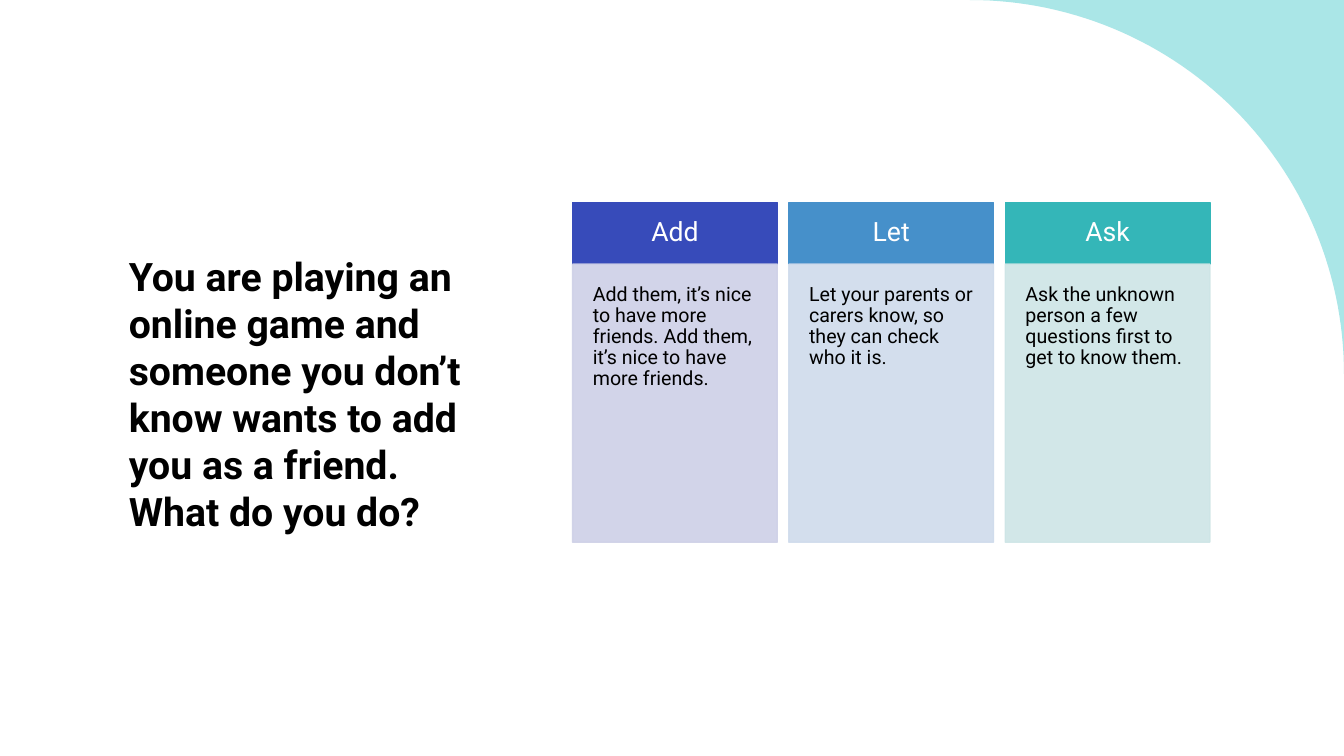
"""Build a quiz slide with one question and three answer cards."""
from math import cos, pi, sin

from lxml.etree import SubElement
from pptx import Presentation
from pptx.dml.color import RGBColor
from pptx.enum.shapes import MSO_SHAPE as Shape
from pptx.enum.text import MSO_ANCHOR as Anchor, PP_ALIGN as Align
from pptx.oxml.ns import qn
from pptx.util import Inches, Pt

QUESTION = ("You are playing an online game and someone you don’t know "
            "wants to add you as a friend. What do you do?")
ANSWERS = [
    ("Add", "Add them, it’s nice to have more friends. "
            "Add them, it’s nice to have more friends.", "374BBA", "CED0E7"),
    ("Let", "Let your parents or carers know, so they can check who it is.",
     "4690CA", "CFDBEC"),
    ("Ask", "Ask the unknown person a few questions first to get to know them.",
     "34B6B8", "CEE5E6"),
]
FONT = "Roboto"
WIDTH, HEIGHT = 13.33, 7.5
CARD_LEFT, CARD_TOP, CARD_WIDTH, CARD_STEP = 5.68, 2.01, 2.03, 2.145
HEAD_HEIGHT, BODY_HEIGHT = 0.61, 2.76
CORNER_RADIUS, CORNER_STEPS = 3.71, 60


def color(value):
    return RGBColor.from_string(value)


def paint(shape, fill, line=True, opacity=100):
    shape.shadow.inherit = False
    shape.fill.solid()
    shape.fill.fore_color.rgb = color(fill)
    if line:
        shape.line.color.rgb = color(fill)
        shape.line.width = Pt(1)
    else:
        shape.line.fill.background()
    if opacity < 100:
        for tone in shape._element.spPr.iter(qn("a:srgbClr")):
            SubElement(tone, qn("a:alpha"), val=str(opacity * 1000))


def write(shape, text, size, ink, anchor, align, margins, bold=False):
    frame = shape.text_frame
    frame.word_wrap = True
    frame.vertical_anchor = anchor
    (frame.margin_left, frame.margin_top,
     frame.margin_right, frame.margin_bottom) = map(Inches, margins)
    frame.text = text
    para = frame.paragraphs[0]
    para.alignment = align
    font = para.runs[0].font
    font.name, font.size, font.bold = FONT, Pt(size), bold
    font.color.rgb = color(ink)
    return para


def add_corner(page):
    left = WIDTH - CORNER_RADIUS
    angles = [pi / 2 * step / CORNER_STEPS for step in range(CORNER_STEPS + 1)]
    arc = [(Inches(left + CORNER_RADIUS * sin(angle)),
            Inches(CORNER_RADIUS * (1 - cos(angle)))) for angle in angles]
    builder = page.shapes.build_freeform(Inches(WIDTH), 0)
    builder.add_line_segments(arc, close=True)
    paint(builder.convert_to_shape(), "AAE6E7", line=False)


def add_card(page, left, heading, answer, head_fill, body_fill):
    parts = [
        (heading, CARD_TOP, HEAD_HEIGHT, head_fill, 100,
         19, "FFFFFF", Anchor.MIDDLE, Align.CENTER, 0.16),
        (answer, CARD_TOP + HEAD_HEIGHT, BODY_HEIGHT, body_fill, 90,
         14, "000000", Anchor.TOP, Align.LEFT, 0.2),
    ]
    for text, top, height, fill, opacity, size, ink, anchor, align, inset in parts:
        box = page.shapes.add_shape(Shape.RECTANGLE, Inches(left), Inches(top),
                                    Inches(CARD_WIDTH), Inches(height))
        paint(box, fill, opacity=opacity)
        para = write(box, text, size, ink, anchor, align, [inset] * 4)
        para.line_spacing = 0.9


def main():
    deck = Presentation()
    deck.slide_width, deck.slide_height = Inches(WIDTH), Inches(HEIGHT)
    page = deck.slides.add_slide(deck.slide_layouts[6])
    title = page.shapes.add_textbox(Inches(1.18), Inches(1.75),
                                    Inches(3.57), Inches(4.07))
    write(title, QUESTION, 28, "000000", Anchor.BOTTOM, Align.LEFT,
          (0.1, 0.05, 0.1, 0.52), bold=True)
    add_corner(page)
    for index, answer in enumerate(ANSWERS):
        add_card(page, CARD_LEFT + index * CARD_STEP, *answer)
    deck.save("out.pptx")


if __name__ == "__main__":
    main()
